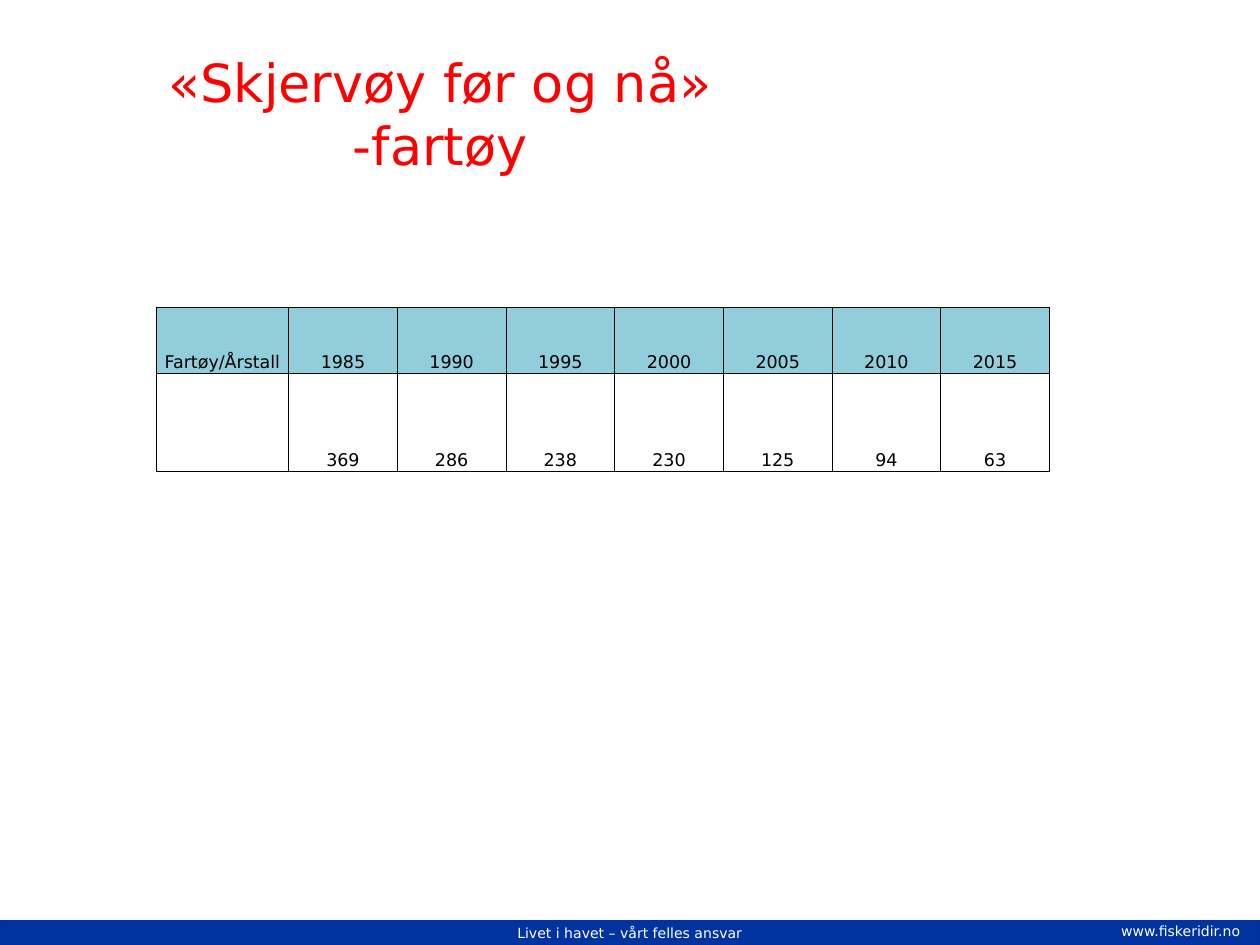
from dataclasses import dataclass

from lxml.etree import SubElement
from pptx import Presentation
from pptx.dml.color import RGBColor
from pptx.enum.shapes import MSO_SHAPE
from pptx.enum.text import MSO_ANCHOR, PP_ALIGN
from pptx.oxml.ns import qn
from pptx.slide import Slide
from pptx.table import _Cell
from pptx.text.text import TextFrame
from pptx.util import Inches, Pt

FONT = "DejaVu Sans"
TABLE_WIDTH = 7.09
LABEL_WIDTH = 1.05
ROW_HEIGHTS = (0.52, 0.78)


@dataclass(frozen=True)
class TextStyle:
    size: float
    color: str
    alignment: PP_ALIGN = PP_ALIGN.CENTER


@dataclass(frozen=True)
class VesselCount:
    year: int
    vessels: int


TITLE_STYLE = TextStyle(30, "FF0000")
FOOTER_STYLE = TextStyle(8, "FFFFFF")
ADDRESS_STYLE = TextStyle(8, "FFFFFF", PP_ALIGN.LEFT)
CELL_STYLE = TextStyle(10, "000000")

COUNTS = [
    VesselCount(1985, 369),
    VesselCount(1990, 286),
    VesselCount(1995, 238),
    VesselCount(2000, 230),
    VesselCount(2005, 125),
    VesselCount(2010, 94),
    VesselCount(2015, 63),
]


def color(value: str) -> RGBColor:
    return RGBColor.from_string(value)


def write(text_frame: TextFrame, text: str, style: TextStyle) -> None:
    paragraph = text_frame.paragraphs[0]
    paragraph.text = text
    paragraph.alignment = style.alignment
    for run in paragraph.runs:
        run.font.name = FONT
        run.font.size = Pt(style.size)
        run.font.color.rgb = color(style.color)


def add_text(slide: Slide, left: float, top: float, width: float, height: float,
             text: str, style: TextStyle, anchor: MSO_ANCHOR = MSO_ANCHOR.TOP) -> None:
    shape = slide.shapes.add_textbox(
        Inches(left), Inches(top), Inches(width), Inches(height))
    shape.text_frame.word_wrap = True
    shape.text_frame.vertical_anchor = anchor
    write(shape.text_frame, text, style)


def add_footer(slide: Slide) -> None:
    bar = slide.shapes.add_shape(
        MSO_SHAPE.RECTANGLE, 0, Inches(7.31), Inches(10), Inches(0.19))
    bar.shadow.inherit = False
    bar.fill.solid()
    bar.fill.fore_color.rgb = color("0033A0")
    bar.line.color.rgb = color("00329C")
    bar.line.width = Pt(0.75)
    bar.text_frame.vertical_anchor = MSO_ANCHOR.MIDDLE
    write(bar.text_frame, "Livet i havet – vårt felles ansvar", FOOTER_STYLE)
    add_text(slide, 8.8, 7.27, 1.92, 0.24, "www.fiskeridir.no", ADDRESS_STYLE)


def add_borders(cell: _Cell) -> None:
    properties = cell._tc.get_or_add_tcPr()
    for side in ("a:lnL", "a:lnR", "a:lnT", "a:lnB"):
        border = SubElement(properties, qn(side), w=str(Pt(0.5)))
        fill = SubElement(border, qn("a:solidFill"))
        SubElement(fill, qn("a:srgbClr"), val="000000")


def format_cell(cell: _Cell, text: str, is_header: bool) -> None:
    cell.vertical_anchor = MSO_ANCHOR.BOTTOM
    cell.margin_left = cell.margin_right = cell.margin_top = Inches(0.01)
    cell.margin_bottom = 0
    add_borders(cell)
    if is_header:
        cell.fill.solid()
        cell.fill.fore_color.rgb = color("92CDDC")
    else:
        cell.fill.background()
    if text:
        write(cell.text_frame, text, CELL_STYLE)


def add_vessel_table(slide: Slide) -> None:
    rows = [
        ["Fartøy/Årstall", *(str(count.year) for count in COUNTS)],
        ["", *(str(count.vessels) for count in COUNTS)],
    ]
    table = slide.shapes.add_table(
        len(rows), len(rows[0]), Inches(1.24), Inches(2.44),
        Inches(TABLE_WIDTH), Inches(sum(ROW_HEIGHTS))).table
    table.first_row = False
    table.horz_banding = False
    year_width = (TABLE_WIDTH - LABEL_WIDTH) / len(COUNTS)
    for index, column in enumerate(table.columns):
        column.width = Inches(year_width if index else LABEL_WIDTH)
    for row_index, texts in enumerate(rows):
        table.rows[row_index].height = Inches(ROW_HEIGHTS[row_index])
        for column_index, text in enumerate(texts):
            format_cell(table.cell(row_index, column_index), text, row_index == 0)


def main() -> None:
    presentation = Presentation()
    presentation.slide_width = Inches(10)
    presentation.slide_height = Inches(7.5)
    slide = presentation.slides.add_slide(presentation.slide_layouts[6])
    add_footer(slide)
    add_text(slide, 0.48, 0.32, 6.03, 1.15, "«Skjervøy før og nå»\v-fartøy",
             TITLE_STYLE, MSO_ANCHOR.MIDDLE)
    add_vessel_table(slide)
    presentation.save("out.pptx")


if __name__ == "__main__":
    main()
